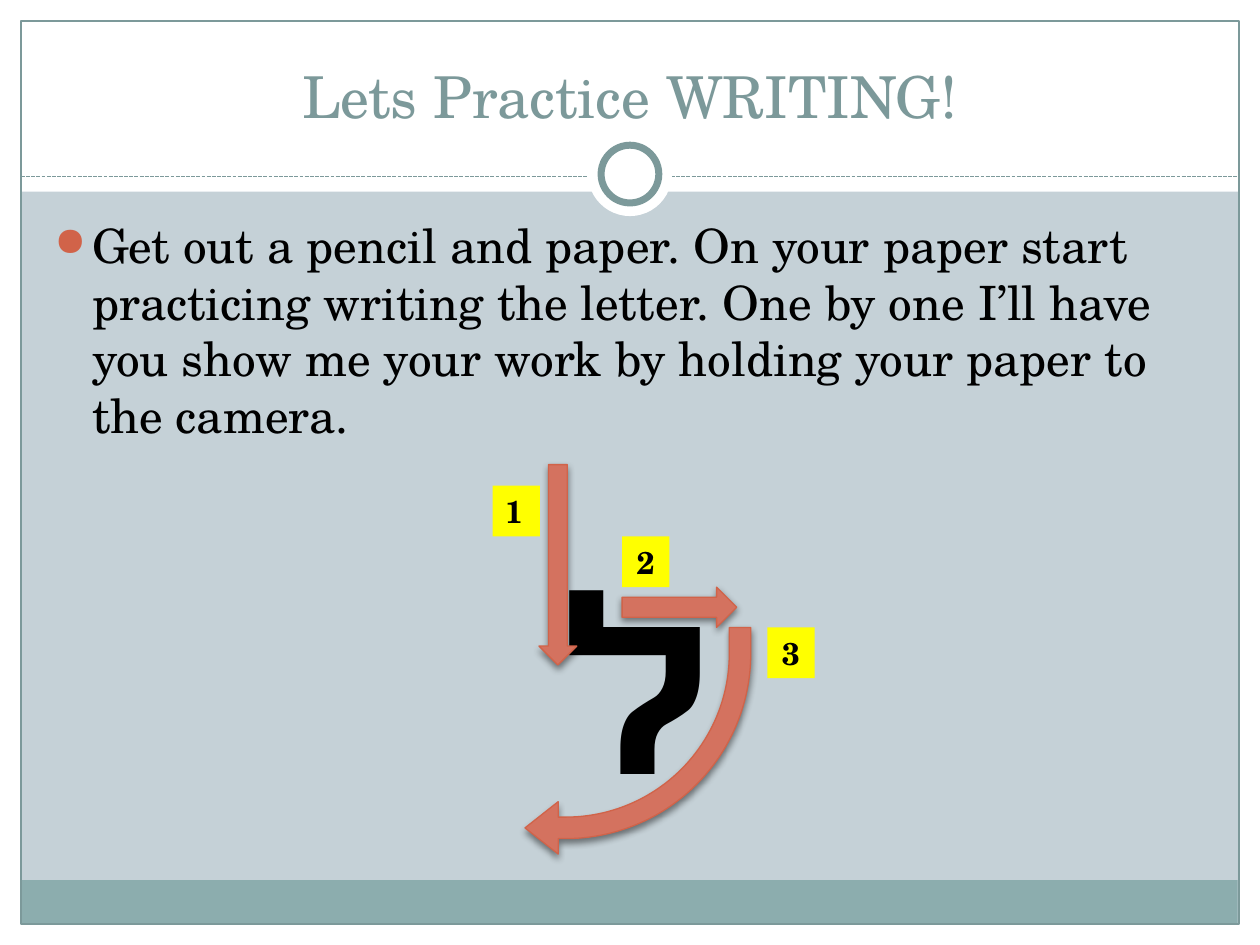
from lxml import etree
from pptx import Presentation
from pptx.dml.color import RGBColor
from pptx.enum import dml, shapes, text
from pptx.oxml.ns import qn
from pptx.util import Pt

FACE = "TeX Gyre Schola"
WHITE = RGBColor(0xFF, 0xFF, 0xFF)
BLACK = RGBColor(0, 0, 0)
MIST = RGBColor(0xC5, 0xD1, 0xD7)
TEAL = RGBColor(0x7C, 0x99, 0x9A)
SAGE = RGBColor(0x8C, 0xAD, 0xAE)
CORAL = RGBColor(0xD4, 0x72, 0x5F)
RUST = RGBColor(0xD1, 0x63, 0x49)
YELLOW = RGBColor(0xFF, 0xFF, 0x00)
KIND = shapes.MSO_SHAPE
CENTER, LEFT = text.PP_ALIGN.CENTER, text.PP_ALIGN.LEFT

deck = Presentation()
deck.slide_width, deck.slide_height = Pt(720), Pt(540)
slide = deck.slides.add_slide(deck.slide_layouts[5])
slide.background.fill.solid()
slide.background.fill.fore_color.rgb = MIST


def draw(kind, box, fill=None, line=None, width=0.75):
    """Add a flat shape; no fill or line unless a colour is given."""
    shape = slide.shapes.add_shape(kind, *map(Pt, box))
    shape.shadow.inherit = False
    if fill is None:
        shape.fill.background()
    else:
        shape.fill.solid()
        shape.fill.fore_color.rgb = fill
    if line is None:
        shape.line.fill.background()
    else:
        shape.line.color.rgb = line
        shape.line.width = Pt(width)
    return shape


def write(shape, words, size, color=BLACK, bold=False, align=CENTER,
          anchor=text.MSO_ANCHOR.TOP):
    frame = shape.text_frame
    frame.word_wrap = True
    frame.vertical_anchor = anchor
    para = frame.paragraphs[0]
    para.text = words
    para.alignment = align
    font = para.font
    font.name, font.size, font.bold = FACE, Pt(size), bold
    font.color.rgb = color
    return para


# Frame of the slide
for box, fill in [
    ((0, 528, 720, 12), WHITE),
    ((0, 0, 720, 109.5), WHITE),
    ((0, 0, 12, 540), WHITE),
    ((708, 0, 12, 540), WHITE),
    ((11.75, 503, 695.5, 24.5), SAGE),
]:
    draw(KIND.RECTANGLE, box, fill)
draw(KIND.RECTANGLE, (12, 12, 696, 516), line=TEAL)

rule = slide.shapes.add_connector(
    shapes.MSO_CONNECTOR.STRAIGHT, Pt(12), Pt(100.8), Pt(708), Pt(100.8))
rule.line.color.rgb = TEAL
rule.line.width = Pt(0.75)
rule.line.dash_style = dml.MSO_LINE.SQUARE_DOT
etree.SubElement(rule.element.spPr, qn("a:effectLst"))

draw(KIND.OVAL, (336, 75.5, 48, 48), WHITE)
draw(KIND.OVAL, (343.5, 83, 33, 33), WHITE, TEAL, 4)

# Title, raised above the frame
title = slide.shapes.title
title.left, title.top, title.width, title.height = map(Pt, (24, 18, 672, 60))
title.element.getparent().append(title.element)
write(title, "Lets Practice WRITING!", 33, TEAL, anchor=text.MSO_ANCHOR.BOTTOM)

# Instructions
body = slide.shapes.add_textbox(Pt(24), Pt(120), Pt(670), Pt(145.5))
para = write(
    body,
    "Get out a pencil and paper. On your paper start practicing writing the "
    "letter. One by one I’ll have you show me your work by holding your "
    "paper to the camera.",
    27, align=LEFT)
para.space_before = Pt(5.4)
props = para.font._element.getparent()
props.set("marL", str(Pt(21.6)))
props.set("indent", str(-Pt(21.6)))
color = etree.Element(qn("a:buClr"))
etree.SubElement(color, qn("a:srgbClr"), val=str(RUST))
bullet = [
    color,
    etree.Element(qn("a:buSzPct"), val="85000"),
    etree.Element(qn("a:buChar"), char="●"),
]
for part in bullet:
    props.find(qn("a:defRPr")).addprevious(part)

# Letter
letter = slide.shapes.add_textbox(Pt(276), Pt(299), Pt(175.5), Pt(177))
write(letter, "ל", 140, bold=True)

# Stroke arrows
arrows = [
    draw(kind, box, CORAL, RUST)
    for kind, box in [
        (KIND.DOWN_ARROW, (308, 265.5, 21.6, 114.5)),
        (KIND.RIGHT_ARROW, (355.5, 335.5, 65.5, 23)),
        (KIND.BENT_ARROW, (300, 358.5, 129, 129.5)),
    ]
]
bend = arrows[-1]
bend.rotation = 180
for i, value in enumerate((0.095, 0.116, 0.147, 0.82)):
    bend.adjustments[i] = value
for arrow in arrows:
    effects = arrow.element.spPr.find(qn("a:effectLst"))
    shade = etree.SubElement(
        effects, qn("a:outerShdw"), blurRad=str(Pt(4)), dist=str(Pt(2)),
        dir="5400000", rotWithShape="0")
    tint = etree.SubElement(shade, qn("a:srgbClr"), val=str(BLACK))
    etree.SubElement(tint, qn("a:alpha"), val="45000")

# Stroke numbers
for num, left, top, align in [
    ("1", 281.5, 277.5, LEFT),
    ("2", 355.5, 306.5, CENTER),
    ("3", 438.5, 358.5, CENTER),
]:
    label = draw(KIND.RECTANGLE, (left, top, 27, 29), YELLOW)
    write(label, num, 18, bold=True, align=align)

deck.save("out.pptx")
